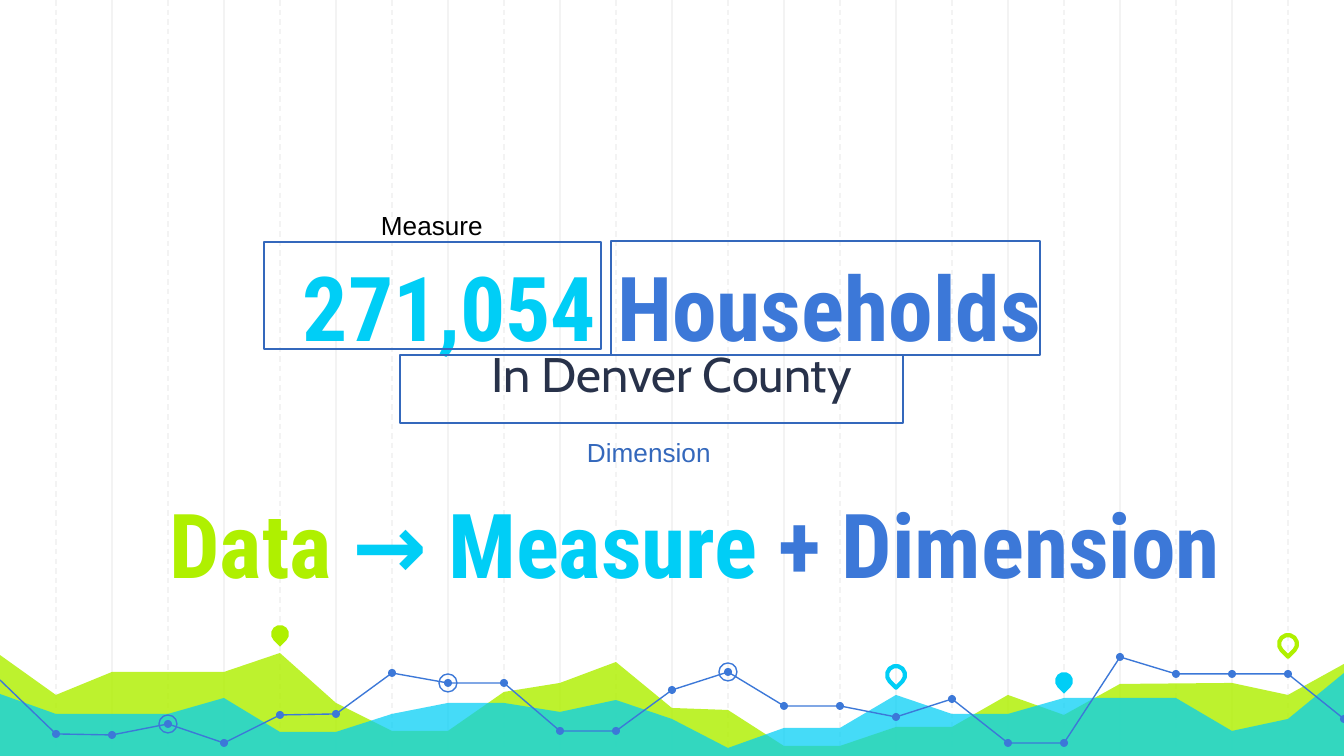
from dataclasses import dataclass

from pptx import Presentation
from pptx.dml.color import RGBColor
from pptx.enum.dml import MSO_LINE
from pptx.enum.shapes import MSO_CONNECTOR, MSO_SHAPE
from pptx.enum.text import MSO_ANCHOR, PP_ALIGN
from pptx.oxml.ns import qn
from pptx.util import Pt
from lxml import etree

OVAL, TEARDROP, RECTANGLE = MSO_SHAPE.OVAL, MSO_SHAPE.TEAR, MSO_SHAPE.RECTANGLE
STRAIGHT, DASH = MSO_CONNECTOR.STRAIGHT, MSO_LINE.DASH
TOP, BOTTOM = MSO_ANCHOR.TOP, MSO_ANCHOR.BOTTOM
LEFT, CENTER = PP_ALIGN.LEFT, PP_ALIGN.CENTER


@dataclass(frozen=True)
class Theme:
    lime: str = "AFF000"
    cyan: str = "00CEF6"
    blue: str = "3C78D8"
    frame: str = "3468BC"
    navy: str = "28324A"
    black: str = "000000"
    grid: str = "F3F3F3"
    thin: float = 0.75
    thick: float = 2.25
    title: int = 48
    subtitle: int = 26
    label: int = 14
    title_font: str = "Roboto Condensed"
    subtitle_font: str = "Cabin"
    label_font: str = "Arial"


THEME = Theme()
PX = 914400 / 134.4
WIDTH, HEIGHT = 1344, 756
STEP, STEPS = 56, 24
BASE = 759
DOT, MARK, INSET = 8, 18, 13

AREAS = [
    (THEME.lime, 82, {
        0: 655, 1: 695, 2: 672, 4: 672, 5: 653, 6: 703, 7: 731, 8: 731,
        9: 692, 10: 683, 11: 662, 12: 708, 13: 710, 14: 746, 15: 746,
        16: 727, 17: 727, 18: 695, 19: 715, 20: 684, 22: 683, 23: 695,
        24: 664}),
    (THEME.cyan, 73, {
        0: 694, 1: 714, 3: 714, 4: 698, 5: 732, 6: 732, 7: 714, 8: 703,
        9: 703, 10: 712, 11: 700, 12: 719, 13: 748, 14: 728, 15: 728,
        16: 695, 17: 714, 18: 714, 19: 698, 21: 698, 22: 731, 23: 719,
        24: 673}),
]
TREND = [680, 734, 735, 724, 743, 715, 714, 673, 683, 683, 731, 731, 690,
         672, 706, 706, 717, 699, 743, 743, 657, 674, 674, 674, 719]
TREND_PARTS = [(0, 11), (11, 20), (20, 24)]
RINGED_STEPS = [3, 8, 13]
PINS = [(5, 634, THEME.lime, True), (16, 675, THEME.cyan, False),
        (19, 681, THEME.cyan, True), (23, 644, THEME.lime, False)]

FRAMES = [(264, 242, 337, 107), (400, 355, 503, 68), (611, 241, 429, 114)]

TITLE = {"size": Pt(THEME.title), "name": THEME.title_font, "bold": True}
SUBTITLE = {"size": Pt(THEME.subtitle), "name": THEME.subtitle_font, "bold": False}
LABEL = {"size": Pt(THEME.label), "name": THEME.label_font, "bold": False}
TEXTS = [
    ((101, 240, 1142, 132), TITLE, BOTTOM, CENTER, True,
     [("271,054 ", THEME.cyan), ("Households", THEME.blue)]),
    ((101, 331, 1142, 69), SUBTITLE, TOP, CENTER, True,
     [("In Denver County", THEME.navy)]),
    ((368, 196, 129, 39), LABEL, TOP, LEFT, False, [("Measure", THEME.black)]),
    ((124, 477, 1142, 132), TITLE, BOTTOM, CENTER, True,
     [("Data", THEME.lime), (" → Measure", THEME.cyan),
      (" + Dimension", THEME.blue)]),
    ((574, 423, 156, 36), LABEL, TOP, LEFT, False, [("Dimension", THEME.frame)]),
]


def px(value):
    return round(value * PX)


def paint(shape, fill=None, line=None, weight=THEME.thin):
    shape.shadow.inherit = False
    if fill:
        shape.fill.solid()
        shape.fill.fore_color.rgb = RGBColor.from_string(fill)
    else:
        shape.fill.background()
    if line:
        shape.line.color.rgb = RGBColor.from_string(line)
        shape.line.width = Pt(weight)
    else:
        shape.line.fill.background()


def add_mark(shapes, preset, step, y, size, **style):
    mark = shapes.add_shape(preset, px(step * STEP - size / 2), px(y - size / 2),
                            px(size), px(size))
    paint(mark, **style)
    return mark


def add_path(shapes, points, close):
    builder = shapes.build_freeform(*points[0], scale=PX)
    builder.add_line_segments(points[1:], close=close)
    return builder.convert_to_shape()


def add_grid(shapes):
    for step in [*range(2, STEPS, 2), *range(1, STEPS, 2)]:
        x = px(step * STEP)
        rule = shapes.add_connector(STRAIGHT, x, 0, x, px(BASE))
        rule.line.color.rgb = RGBColor.from_string(THEME.grid)
        rule.line.width = Pt(THEME.thin)
        if step % 2:
            rule.line.dash_style = DASH
        etree.SubElement(rule._element.spPr, qn("a:effectLst"))


def add_areas(shapes):
    for color, opacity, heights in AREAS:
        crest = [(step * STEP, y) for step, y in heights.items()]
        area = add_path(shapes, crest + [(WIDTH, BASE), (-4, BASE)], True)
        paint(area, fill=color)
        tint = area._element.spPr.find(qn("a:solidFill"))[0]
        etree.SubElement(tint, qn("a:alpha"), val=str(opacity * 1000))


def add_pins(shapes):
    for step, y, color, solid in PINS:
        style = {"fill": color} if solid else {"line": color, "weight": THEME.thick}
        pin = add_mark(shapes, TEARDROP, step, y, MARK, **style)
        pin.rotation = 135


def add_trend(shapes):
    points = [(step * STEP, y) for step, y in enumerate(TREND)]
    for first, last in TREND_PARTS:
        paint(add_path(shapes, points[first:last + 1], False), line=THEME.blue)
    for step, y in enumerate(TREND[1:], 1):
        add_mark(shapes, OVAL, step, y, DOT, fill=THEME.blue)
    for step in RINGED_STEPS:
        add_mark(shapes, OVAL, step, TREND[step], MARK, line=THEME.blue)


def add_text(shapes, box, style, anchor, align, wrap, runs):
    frame = shapes.add_textbox(*map(px, box)).text_frame
    layout = {"word_wrap": wrap, "vertical_anchor": anchor}
    for side in ("left", "top", "right", "bottom"):
        layout[f"margin_{side}"] = px(INSET)
    for key, value in layout.items():
        setattr(frame, key, value)
    paragraph = frame.paragraphs[0]
    paragraph.alignment = align
    for words, color in runs:
        run = paragraph.add_run()
        run.text = words
        for key, value in style.items():
            setattr(run.font, key, value)
        run.font.color.rgb = RGBColor.from_string(color)


def main():
    deck = Presentation()
    deck.slide_width, deck.slide_height = px(WIDTH), px(HEIGHT)
    shapes = deck.slides.add_slide(deck.slide_layouts[6]).shapes
    for add_layer in (add_grid, add_areas, add_pins, add_trend):
        add_layer(shapes)
    for text in TEXTS:
        add_text(shapes, *text)
    for box in FRAMES:
        paint(shapes.add_shape(RECTANGLE, *map(px, box)), line=THEME.frame)
    deck.save("out.pptx")


if __name__ == "__main__":
    main()
